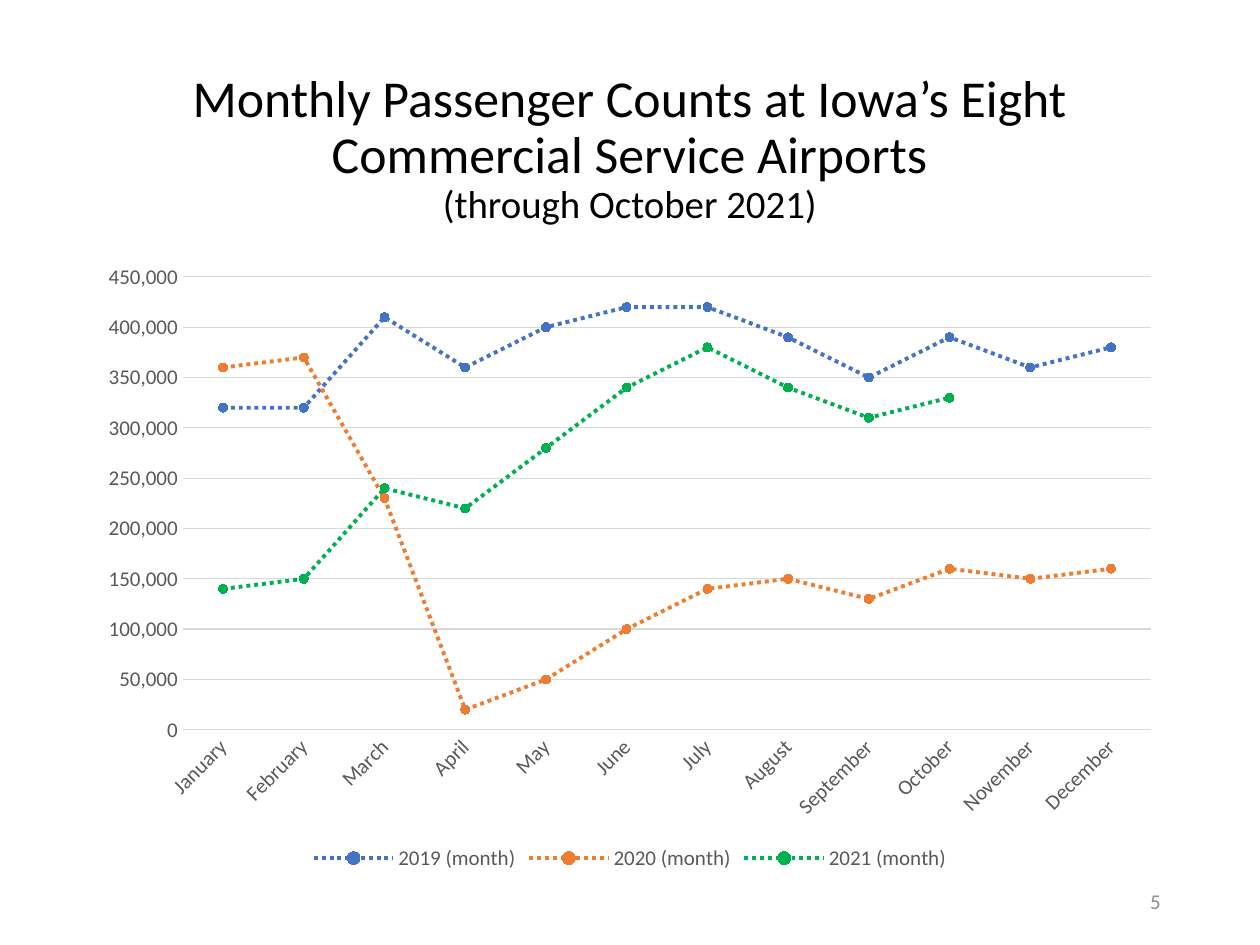
from dataclasses import dataclass

from pptx import Presentation
from pptx.chart.data import CategoryChartData
from pptx.dml.color import RGBColor
from pptx.enum.chart import XL_CHART_TYPE, XL_LEGEND_POSITION, XL_MARKER_STYLE, XL_TICK_MARK
from pptx.enum.dml import MSO_LINE
from pptx.enum.text import MSO_ANCHOR, PP_ALIGN
from pptx.util import Inches, Pt

LINE_MARKERS = XL_CHART_TYPE.LINE_MARKERS
LEGEND_BOTTOM = XL_LEGEND_POSITION.BOTTOM
CIRCLE = XL_MARKER_STYLE.CIRCLE
NO_TICK = XL_TICK_MARK.NONE
DOTTED = MSO_LINE.ROUND_DOT
BOTTOM, MIDDLE = MSO_ANCHOR.BOTTOM, MSO_ANCHOR.MIDDLE
CENTER, RIGHT = PP_ALIGN.CENTER, PP_ALIGN.RIGHT

FONT = "Calibri"
COLORS = {
    "title": "000000",
    "label": "595959",
    "grid": "D9D9D9",
    "number": "8C8C8C",
    "2019": "4472C4",
    "2020": "ED7D31",
    "2021": "00B050",
}
MONTHS = ["January", "February", "March", "April", "May", "June", "July",
          "August", "September", "October", "November", "December"]


@dataclass
class YearCounts:
    year: str
    thousands: list


@dataclass
class TextLine:
    text: str
    size: float


YEARS = [
    YearCounts("2019", [320, 320, 410, 360, 400, 420, 420, 390, 350, 390, 360, 380]),
    YearCounts("2020", [360, 370, 230, 20, 50, 100, 140, 150, 130, 160, 150, 160]),
    YearCounts("2021", [140, 150, 240, 220, 280, 340, 380, 340, 310, 330, None, None]),
]
TITLE = [
    TextLine("Monthly Passenger Counts at Iowa’s Eight Commercial Service Airports", 29.6),
    TextLine("(through October 2021)", 22.2),
]


def color(name: str) -> RGBColor:
    return RGBColor.from_string(COLORS[name])


def set_font(font, size: float, name: str) -> None:
    font.name, font.size = FONT, Pt(size)
    font.color.rgb = color(name)


def set_line(line, name: str, width: float) -> None:
    line.color.rgb = color(name)
    line.width = Pt(width)


def add_text(page, bounds: tuple, lines: list[TextLine], name: str,
             anchor, alignment, spacing: float) -> None:
    frame = page.shapes.add_textbox(*map(Inches, bounds)).text_frame
    frame.word_wrap = True
    frame.vertical_anchor = anchor
    for index, line in enumerate(lines):
        para = frame.paragraphs[0] if index == 0 else frame.add_paragraph()
        para.text = line.text
        para.alignment = alignment
        para.line_spacing = spacing
        set_font(para.font, line.size, name)


def style_axes(chart) -> None:
    months, counts = chart.category_axis, chart.value_axis
    for axis in (months, counts):
        axis.major_tick_mark = axis.minor_tick_mark = NO_TICK
        set_font(axis.tick_labels.font, 12, "label")
    set_line(months.format.line, "grid", 0.75)
    months._element.txPr.bodyPr.set("rot", "-2700000")
    counts.format.line.fill.background()
    counts.minimum_scale, counts.maximum_scale, counts.major_unit = 0, 450000, 50000
    counts.tick_labels.number_format = "#,##0"
    counts.tick_labels.number_format_is_linked = False
    set_line(counts.major_gridlines.format.line, "grid", 0.75)


def add_passenger_chart(page, bounds: tuple, years: list[YearCounts]) -> None:
    data = CategoryChartData(number_format="#,##0")
    data.categories = MONTHS
    for entry in years:
        values = [None if count is None else count * 1000 for count in entry.thousands]
        data.add_series(f"{entry.year} (month)", values)
    chart = page.shapes.add_chart(LINE_MARKERS, *map(Inches, bounds), data).chart
    set_font(chart.font, 10, "title")
    chart.has_title = False
    chart.has_legend = True
    chart.legend.position = LEGEND_BOTTOM
    chart.legend.include_in_layout = False
    set_font(chart.legend.font, 12, "label")
    style_axes(chart)
    plot = chart.plots[0]
    plot.vary_by_categories = False
    for entry, series in zip(years, plot.series):
        series.smooth = False
        set_line(series.format.line, entry.year, 2.25)
        series.format.line.dash_style = DOTTED
        series.marker.style, series.marker.size = CIRCLE, 5
        series.marker.format.fill.solid()
        series.marker.format.fill.fore_color.rgb = color(entry.year)
        set_line(series.marker.format.line, entry.year, 0.75)


def main() -> None:
    """Build the monthly airport passenger slide."""
    deck = Presentation()
    deck.slide_width, deck.slide_height = Inches(10), Inches(7.5)
    page = deck.slides.add_slide(deck.slide_layouts[6])
    add_passenger_chart(page, (0.69, 2, 8.62, 4.95), YEARS)
    add_text(page, (7.06, 6.95, 2.25, 0.4), [TextLine("5", 12)], "number", MIDDLE, RIGHT, 1.0)
    add_text(page, (0.69, 0.4, 8.62, 1.45), TITLE, "title", BOTTOM, CENTER, 0.9)
    deck.save("out.pptx")


if __name__ == "__main__":
    main()
